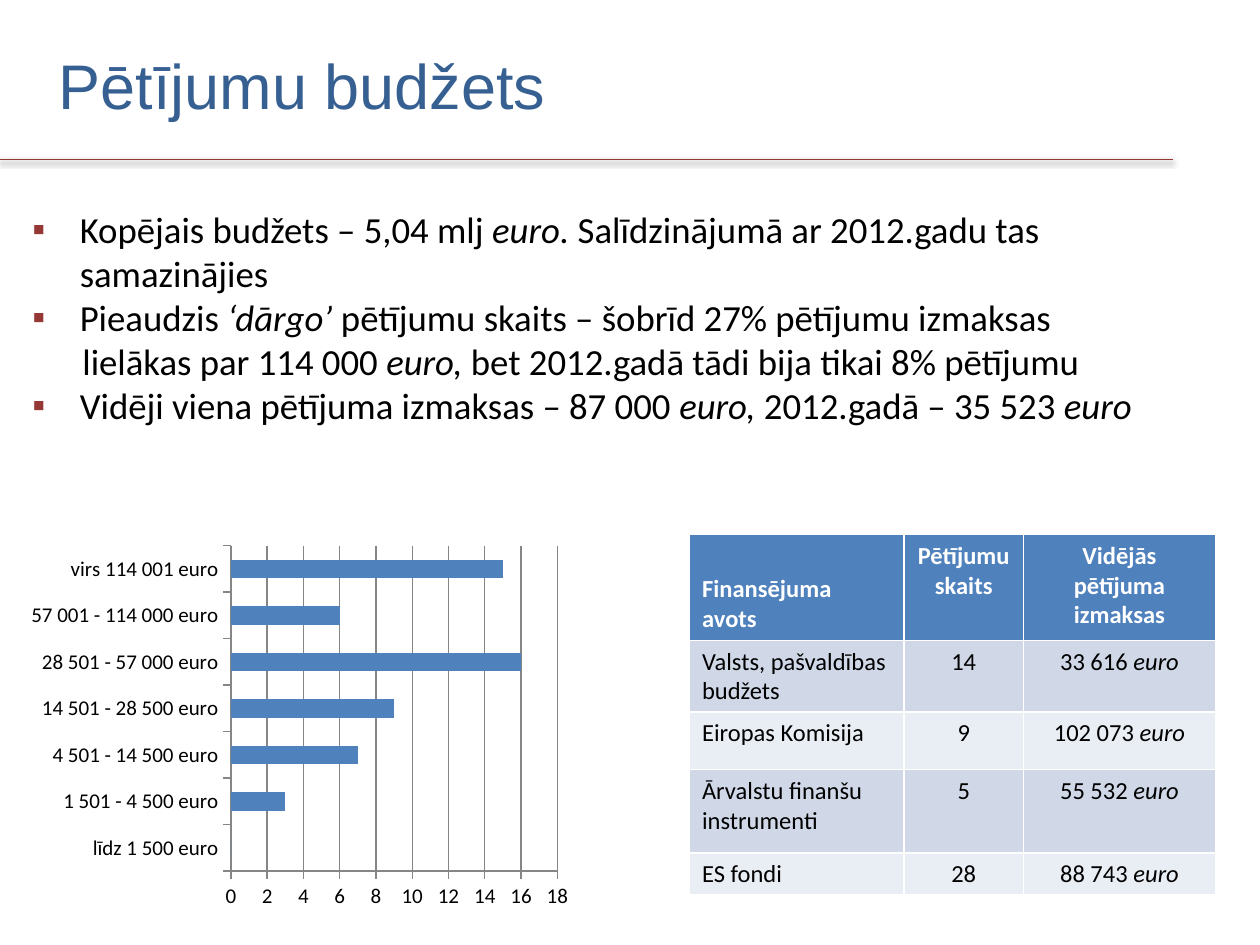
from dataclasses import dataclass

from lxml import etree
from pptx import Presentation
from pptx.chart.data import CategoryChartData
from pptx.dml.color import RGBColor
from pptx.enum import chart as charts, shapes, text
from pptx.oxml import ns
from pptx.util import Pt

TITLE = "Pētījumu budžets"
# Asterisks enclose italic passages
FINDINGS = [
    ("▪", "Kopējais budžets – 5,04 mlj *euro. *Salīdzinājumā ar 2012.gadu tas samazinājies"),
    ("▪", "Pieaudzis *‘dārgo’ *pētījumu skaits – šobrīd 27% pētījumu izmaksas"),
    ("", "lielākas par 114 000 *euro,* bet 2012.gadā tādi bija tikai 8% pētījumu"),
    ("▪", "Vidēji viena pētījuma izmaksas – 87 000 *euro, *2012.gadā – 35 523 *euro*"),
]
COSTS = [
    ("līdz 1 500 euro", 0),
    ("1 501 - 4 500 euro", 3),
    ("4 501 - 14 500 euro", 7),
    ("14 501 - 28 500 euro", 9),
    ("28 501 - 57 000 euro", 16),
    ("57 001 - 114 000 euro", 6),
    ("virs 114 001 euro", 15),
]
SOURCES = [
    ("Finansējuma avots", "Pētījumu skaits", "Vidējās pētījuma izmaksas"),
    ("Valsts, pašvaldības budžets", "14", "33 616 *euro*"),
    ("Eiropas Komisija", "9", "102 073 *euro*"),
    ("Ārvalstu finanšu instrumenti", "5", "55 532 *euro*"),
    ("ES fondi", "28", "88 743 *euro*"),
]
COLUMN_WIDTHS = (122.5, 68.5, 109.5)
ROW_HEIGHTS = (60.5, 33, 33, 47.5, 21)


@dataclass(frozen=True)
class Theme:
    heading_font: str = "Arial"
    body_font: str = "Calibri"
    title_size: float = 36
    body_size: float = 21
    table_size: float = 14
    chart_size: float = 12
    title: str = "376092"
    accent: str = "953735"
    ink: str = "000000"
    white: str = "FFFFFF"
    blue: str = "4F81BD"
    grid: str = "868686"
    bands: tuple = ("E9EDF4", "D0D8E8")


THEME = Theme()


def rgb(value):
    return RGBColor.from_string(value)


def box(left, top, width, height):
    return Pt(left), Pt(top), Pt(width), Pt(height)


def style(font, size, color, face=THEME.body_font, bold=False):
    font.name, font.size, font.bold = face, Pt(size), bold
    font.color.rgb = rgb(color)


def write(paragraph, marked, size, color, bold=False):
    for index, part in enumerate(marked.split("*")):
        if part:
            run = paragraph.add_run()
            run.text = part
            style(run.font, size, color, bold=bold)
            run.font.italic = index % 2 == 1


def child(parent, tag, **attributes):
    return etree.SubElement(parent, ns.qn(tag), attributes)


def add_title(slide):
    frame = slide.shapes.add_textbox(*box(26.5, 3, 679.5, 90)).text_frame
    frame.word_wrap = True
    frame.vertical_anchor = text.MSO_ANCHOR.MIDDLE
    frame.text = TITLE
    style(frame.paragraphs[0].runs[0].font, THEME.title_size, THEME.title, THEME.heading_font)


def add_rule(slide):
    rule = slide.shapes.add_connector(
        shapes.MSO_CONNECTOR.STRAIGHT, Pt(0), Pt(91), Pt(670.5), Pt(91))
    rule.line.color.rgb = rgb(THEME.accent)
    rule.line.width = Pt(0.75)
    effects = child(rule._element.spPr, "a:effectLst")
    shadow = child(effects, "a:outerShdw", blurRad=str(Pt(3.1)), dist=str(Pt(1.6)),
                   dir="5400000", rotWithShape="0")
    child(child(shadow, "a:srgbClr", val=THEME.ink), "a:alpha", val="38000")


def add_findings(slide):
    frame = slide.shapes.add_textbox(*box(11.5, 114.5, 695, 134.5)).text_frame
    frame.word_wrap = True
    for index, (bullet, finding) in enumerate(FINDINGS):
        paragraph = frame.paragraphs[0] if index == 0 else frame.add_paragraph()
        write(paragraph, finding, THEME.body_size, THEME.ink)
        properties = paragraph._p.get_or_add_pPr()
        properties.set("marL", str(Pt(27 if bullet else 28.5)))
        if bullet:
            properties.set("indent", str(Pt(-27)))
            child(child(properties, "a:buClr"), "a:srgbClr", val=THEME.accent)
            child(properties, "a:buFont", typeface=THEME.heading_font)
            child(properties, "a:buChar", char=bullet)


def add_costs(slide):
    data = CategoryChartData()
    data.categories = [label for label, _ in COSTS]
    data.add_series("Series 1", [count for _, count in COSTS])
    costs = slide.shapes.add_chart(
        charts.XL_CHART_TYPE.BAR_CLUSTERED, *box(11.5, 307.5, 319.5, 216), data).chart
    costs.has_legend = costs.has_title = False
    style(costs.font, THEME.chart_size, THEME.ink)
    plot = costs.plots[0]
    plot.gap_width, plot.vary_by_categories = 150, False
    fill = plot.series[0].format.fill
    fill.solid()
    fill.fore_color.rgb = rgb(THEME.blue)
    scale = costs.value_axis
    scale.minimum_scale, scale.maximum_scale, scale.major_unit = 0, 18, 2
    scale.has_major_gridlines = True
    scale.major_gridlines.format.line.color.rgb = rgb(THEME.grid)
    for axis in (scale, costs.category_axis):
        axis.major_tick_mark = charts.XL_TICK_MARK.OUTSIDE
        axis.minor_tick_mark = charts.XL_TICK_MARK.NONE
        axis.format.line.color.rgb = rgb(THEME.grid)


def add_sources(slide):
    sources = slide.shapes.add_table(
        len(SOURCES), len(COLUMN_WIDTHS),
        *box(394, 305.5, sum(COLUMN_WIDTHS), sum(ROW_HEIGHTS))).table
    for column, width in zip(sources.columns, COLUMN_WIDTHS):
        column.width = Pt(width)
    for r, (row, height, values) in enumerate(zip(sources.rows, ROW_HEIGHTS, SOURCES)):
        row.height = Pt(height)
        header = r == 0
        for c, (cell, value) in enumerate(zip(row.cells, values)):
            cell.fill.solid()
            cell.fill.fore_color.rgb = rgb(THEME.blue if header else THEME.bands[r % 2])
            paragraph = cell.text_frame.paragraphs[0]
            write(paragraph, value, THEME.table_size,
                  THEME.white if header else THEME.ink, header)
            if c:
                paragraph.alignment = text.PP_ALIGN.CENTER
    sources.cell(0, 0).vertical_anchor = text.MSO_ANCHOR.BOTTOM


def main():
    """Build the research budget slide."""
    deck = Presentation()
    deck.slide_width, deck.slide_height = Pt(720), Pt(540)
    slide = deck.slides.add_slide(deck.slide_layouts[6])
    for add in (add_title, add_rule, add_findings, add_sources, add_costs):
        add(slide)
    deck.save("out.pptx")


if __name__ == "__main__":
    main()
